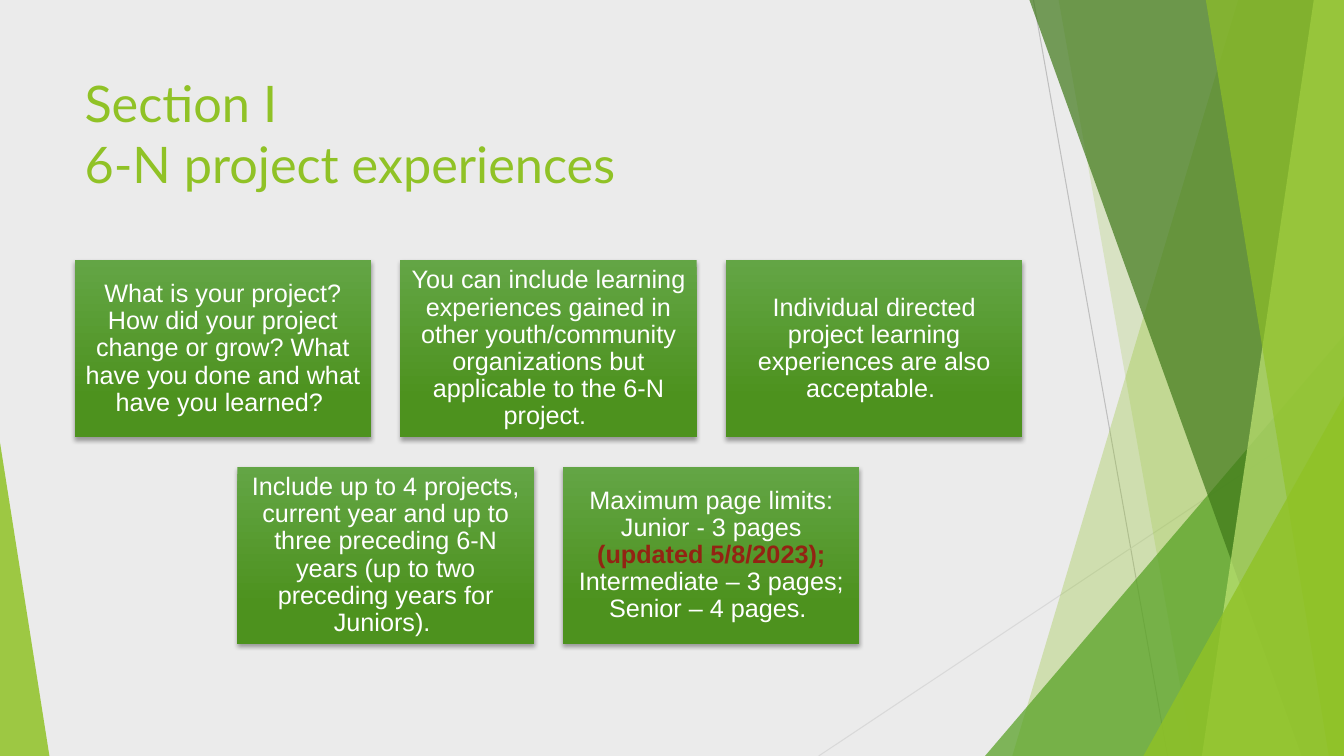
from dataclasses import dataclass

from lxml import etree
from pptx import Presentation
from pptx.dml.color import RGBColor
from pptx.enum.shapes import MSO_CONNECTOR, MSO_SHAPE
from pptx.enum.text import MSO_ANCHOR, PP_ALIGN
from pptx.oxml.ns import qn
from pptx.util import Inches, Pt

WIDTH, HEIGHT = 13.33, 7.5
BACKGROUND = RGBColor(0xEB, 0xEB, 0xEB)
LIME = RGBColor(0x90, 0xC2, 0x26)
GREEN = RGBColor(0x54, 0xA0, 0x21)
DARK_GREEN = RGBColor(0x3F, 0x78, 0x19)
PALE_LIME = RGBColor(0xC0, 0xE4, 0x74)
GRAY = RGBColor(0xBF, 0xBF, 0xBF)
LIGHT_GRAY = RGBColor(0xD9, 0xD9, 0xD9)
CARD_TOP = RGBColor(0x63, 0xA5, 0x45)
CARD_BOTTOM = RGBColor(0x4D, 0x92, 0x1E)
WHITE = RGBColor(0xFF, 0xFF, 0xFF)
RED = RGBColor(0x93, 0x23, 0x13)

CARD_LEFT, CARD_FIRST_TOP = 0.74, 2.58
CARD_WIDTH, CARD_HEIGHT = 2.94, 1.76
CARD_STEP_X, CARD_STEP_Y = 3.23, 2.05
CARD_INSET = Inches(0.07)


@dataclass
class Ray:
    start: tuple[float, float]
    end: tuple[float, float]
    color: RGBColor


@dataclass
class Band:
    top_left: float
    bottom_left: float
    color: RGBColor
    opacity: int


@dataclass
class Corner:
    left: float
    top: float
    width: float
    peak: float
    color: RGBColor
    opacity: int


@dataclass
class Span:
    text: str
    color: RGBColor = WHITE
    bold: bool = False


RAYS = [
    Ray((10.25, 0), (11.58, HEIGHT), GRAY),
    Ray((WIDTH, 4.03), (8.12, HEIGHT), LIGHT_GRAY),
]
FACETS = [
    Band(12.28, 10.04, LIME, 30),
    Band(10.5, 11.83, LIME, 20),
    Corner(9.77, 3.33, 3.56, 1, GREEN, 72),
    Band(10.21, 12.91, DARK_GREEN, 70),
    Band(13.03, 11.92, PALE_LIME, 70),
    Band(11.96, 13.18, LIME, 65),
    Corner(11.34, 3.93, 1.99, 1, LIME, 80),
    Corner(0, 4.39, 0.49, 0, LIME, 85),
]
TITLE_LINES = ["Section I", "6-N project experiences"]
CARD_ROWS = [
    [
        [Span("What is your project? How did your project change or grow? "
              "What have you done and what have you learned? ")],
        [Span("You can include learning experiences gained in other youth/community "
              "organizations but applicable to the 6-N project. ")],
        [Span("Individual directed project learning experiences are also acceptable. ")],
    ],
    [
        [Span("Include up to 4 projects, current year and up to three preceding "
              "6-N years (up to two preceding years for Juniors). ")],
        [
            Span("Maximum page limits: Junior - 3 pages "),
            Span("(updated 5/8/2023); ", RED, True),
            Span("Intermediate – 3 pages; Senior – 4 pages. "),
        ],
    ],
]


def add_ray(page, ray: Ray) -> None:
    line = page.shapes.add_connector(
        MSO_CONNECTOR.STRAIGHT, *map(Inches, ray.start + ray.end))
    line.line.color.rgb = ray.color
    line.line.width = Pt(0.75)
    etree.SubElement(line._element.spPr, qn("a:effectLst"))


def add_facet(page, facet: Band | Corner) -> None:
    if isinstance(facet, Band):
        builder = page.shapes.build_freeform(Inches(facet.top_left), 0)
        corners = [(WIDTH, 0), (WIDTH, HEIGHT), (facet.bottom_left, HEIGHT)]
        builder.add_line_segments([(Inches(x), Inches(y)) for x, y in corners])
        shape = builder.convert_to_shape()
    else:
        shape = page.shapes.add_shape(
            MSO_SHAPE.ISOSCELES_TRIANGLE, Inches(facet.left), Inches(facet.top),
            Inches(facet.width), Inches(HEIGHT - facet.top))
        shape.adjustments[0] = facet.peak
    shape.shadow.inherit = False
    shape.line.fill.background()
    shape.fill.solid()
    shape.fill.fore_color.rgb = facet.color
    color = shape._element.spPr.find(qn("a:solidFill")).find(qn("a:srgbClr"))
    etree.SubElement(color, qn("a:alpha"), val=str(facet.opacity * 1000))


def add_title(page, lines: list[str]) -> None:
    box = page.shapes.add_textbox(
        Inches(0.74), Inches(0.67), Inches(9.4), Inches(1.44))
    box.text_frame.word_wrap = True
    para = box.text_frame.paragraphs[0]
    for index, text in enumerate(lines):
        if index:
            para.add_line_break()
        run = para.add_run()
        run.text = text
        run.font.name = "Lato"
        run.font.size = Pt(36)
        run.font.color.rgb = LIME


def add_card_shadow(card) -> None:
    card.shadow.inherit = False
    effects = card._element.spPr.find(qn("a:effectLst"))
    shadow = etree.SubElement(
        effects, qn("a:outerShdw"), blurRad=str(Pt(3)), dist=str(Pt(2)),
        dir="5400000", rotWithShape="0")
    color = etree.SubElement(shadow, qn("a:srgbClr"), val="000000")
    etree.SubElement(color, qn("a:alpha"), val="35000")


def add_card(page, left: float, top: float, spans: list[Span]) -> None:
    card = page.shapes.add_shape(
        MSO_SHAPE.RECTANGLE, Inches(left), Inches(top),
        Inches(CARD_WIDTH), Inches(CARD_HEIGHT))
    card.line.fill.background()
    card.fill.gradient()
    card.fill.gradient_angle = 270
    stops = [(0, CARD_TOP), (0.78, CARD_BOTTOM)]
    for stop, (position, color) in zip(card.fill.gradient_stops, stops):
        stop.position = position
        stop.color.rgb = color
    add_card_shadow(card)

    frame = card.text_frame
    frame.word_wrap = True
    frame.vertical_anchor = MSO_ANCHOR.MIDDLE
    frame.margin_left = frame.margin_right = CARD_INSET
    frame.margin_top = frame.margin_bottom = CARD_INSET
    para = frame.paragraphs[0]
    para.alignment = PP_ALIGN.CENTER
    para.line_spacing = 0.9
    for span in spans:
        run = para.add_run()
        run.text = span.text
        run.font.name = "Arial"
        run.font.size = Pt(18)
        run.font.bold = span.bold
        run.font.color.rgb = span.color


def main() -> None:
    deck = Presentation()
    deck.slide_width, deck.slide_height = Inches(WIDTH), Inches(HEIGHT)
    page = deck.slides.add_slide(deck.slide_layouts[6])
    page.background.fill.solid()
    page.background.fill.fore_color.rgb = BACKGROUND

    for ray in RAYS:
        add_ray(page, ray)
    for facet in FACETS:
        add_facet(page, facet)
    add_title(page, TITLE_LINES)

    widest = max(map(len, CARD_ROWS))
    for row, cards in enumerate(CARD_ROWS):
        row_left = CARD_LEFT + (widest - len(cards)) * CARD_STEP_X / 2
        for column, spans in enumerate(cards):
            add_card(page, row_left + column * CARD_STEP_X,
                     CARD_FIRST_TOP + row * CARD_STEP_Y, spans)

    deck.save("out.pptx")


if __name__ == "__main__":
    main()
